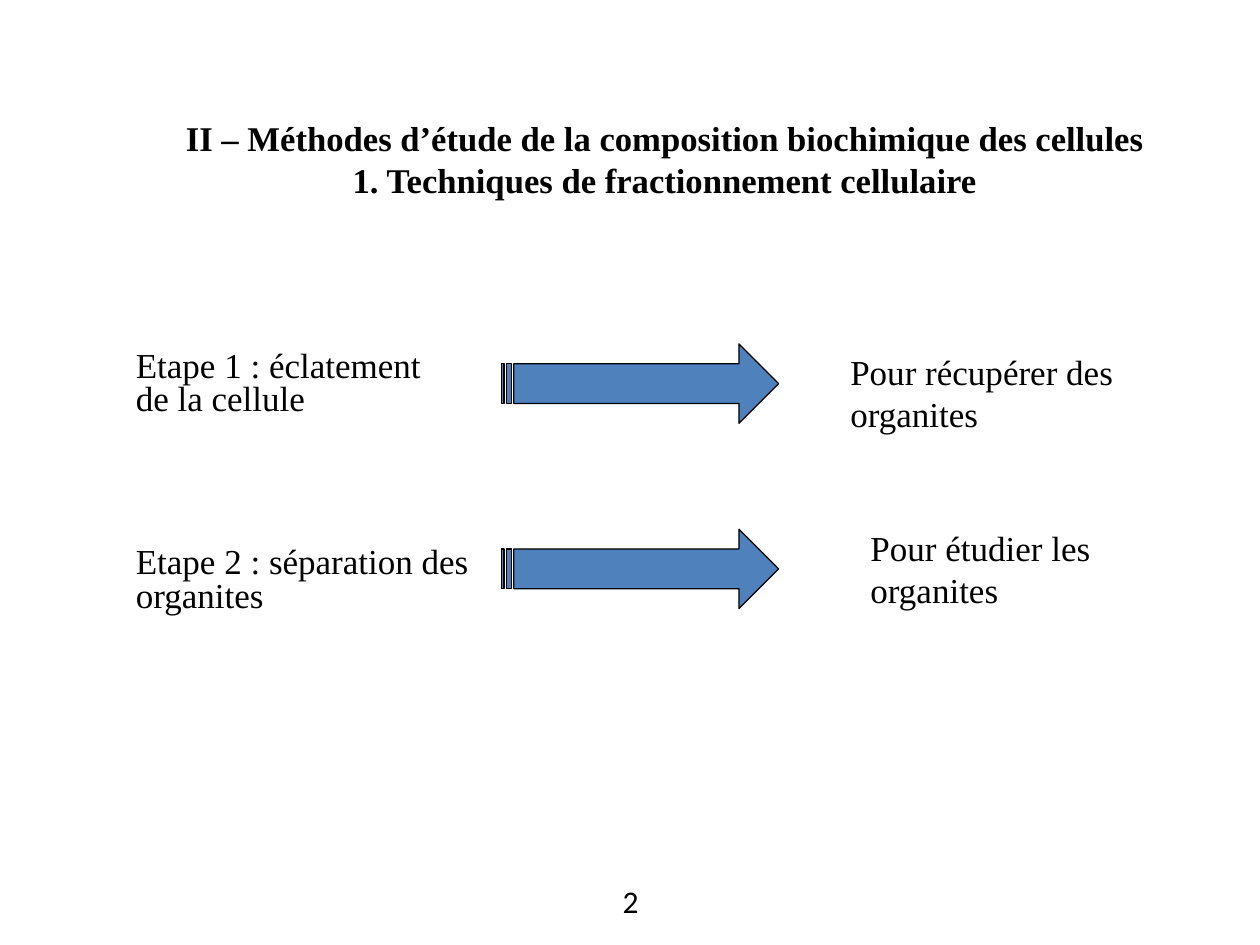
from pptx import Presentation
from pptx import util as u
from pptx.dml.color import RGBColor
from pptx.enum import shapes, text

BLACK = RGBColor(0x00, 0x00, 0x00)
BLUE = RGBColor(0x4F, 0x81, 0xBD)


class SlideBuilder:
    """Holds the shared text style and the current slide."""

    style = {"name": "Times New Roman", "size": u.Pt(20), "bold": False}

    def __init__(self, slide):
        self.slide = slide

    def text(self, box, lines, align=text.PP_ALIGN.LEFT,
             anchor=text.MSO_ANCHOR.TOP, spacing=None, **font):
        sp = self.slide.shapes.add_textbox(*map(u.Inches, box))
        tf = sp.text_frame
        tf.word_wrap = True
        tf.vertical_anchor = anchor
        for i, line in enumerate(lines):
            p = tf.add_paragraph() if i else tf.paragraphs[0]
            p.alignment = align
            p.line_spacing = spacing
            r = p.add_run()
            r.text = line
            r.font.color.rgb = BLACK
            for key, value in {**self.style, **font}.items():
                setattr(r.font, key, value)

    def arrow(self, box):
        sp = self.slide.shapes.add_shape(
            shapes.MSO_SHAPE.STRIPED_RIGHT_ARROW, *map(u.Inches, box))
        sp.shadow.inherit = False
        sp.fill.solid()
        sp.fill.fore_color.rgb = BLUE
        sp.line.color.rgb = BLACK
        sp.line.width = u.Pt(0.75)


def main():
    prs = Presentation()
    prs.slide_width, prs.slide_height = u.Inches(10), u.Inches(7.5)
    s = SlideBuilder(prs.slides.add_slide(prs.slide_layouts[6]))
    centred = {"align": text.PP_ALIGN.CENTER, "anchor": text.MSO_ANCHOR.MIDDLE}

    # Title
    s.text((0.55, 0.79, 9.45, 0.94),
           ["II – Méthodes d’étude de la composition biochimique des cellules",
            "1. Techniques de fractionnement cellulaire"],
           size=u.Pt(19.8), bold=True, **centred)

    # Steps: each leads through an arrow to its purpose
    steps = [
        ("Etape 1 : éclatement de la cellule", (0.98, 2.74, 2.76, 0.64), 2.73,
         "Pour récupérer des organites", (6.65, 2.73, 2.76, 0.77)),
        ("Etape 2 : séparation des organites", (0.98, 4.3, 2.84, 0.64), 4.2,
         "Pour étudier les organites", (6.81, 4.13, 2.76, 0.77)),
    ]
    for step, step_box, arrow_top, purpose, purpose_box in steps:
        s.text(step_box, [step], spacing=0.8)
        s.arrow((3.98, arrow_top, 2.2, 0.63))
        s.text(purpose_box, [purpose])

    # Slide number
    s.text((3.42, 6.95, 3.17, 0.4), ["2"], name="Calibri", size=u.Pt(18), **centred)

    prs.save("out.pptx")


if __name__ == "__main__":
    main()
